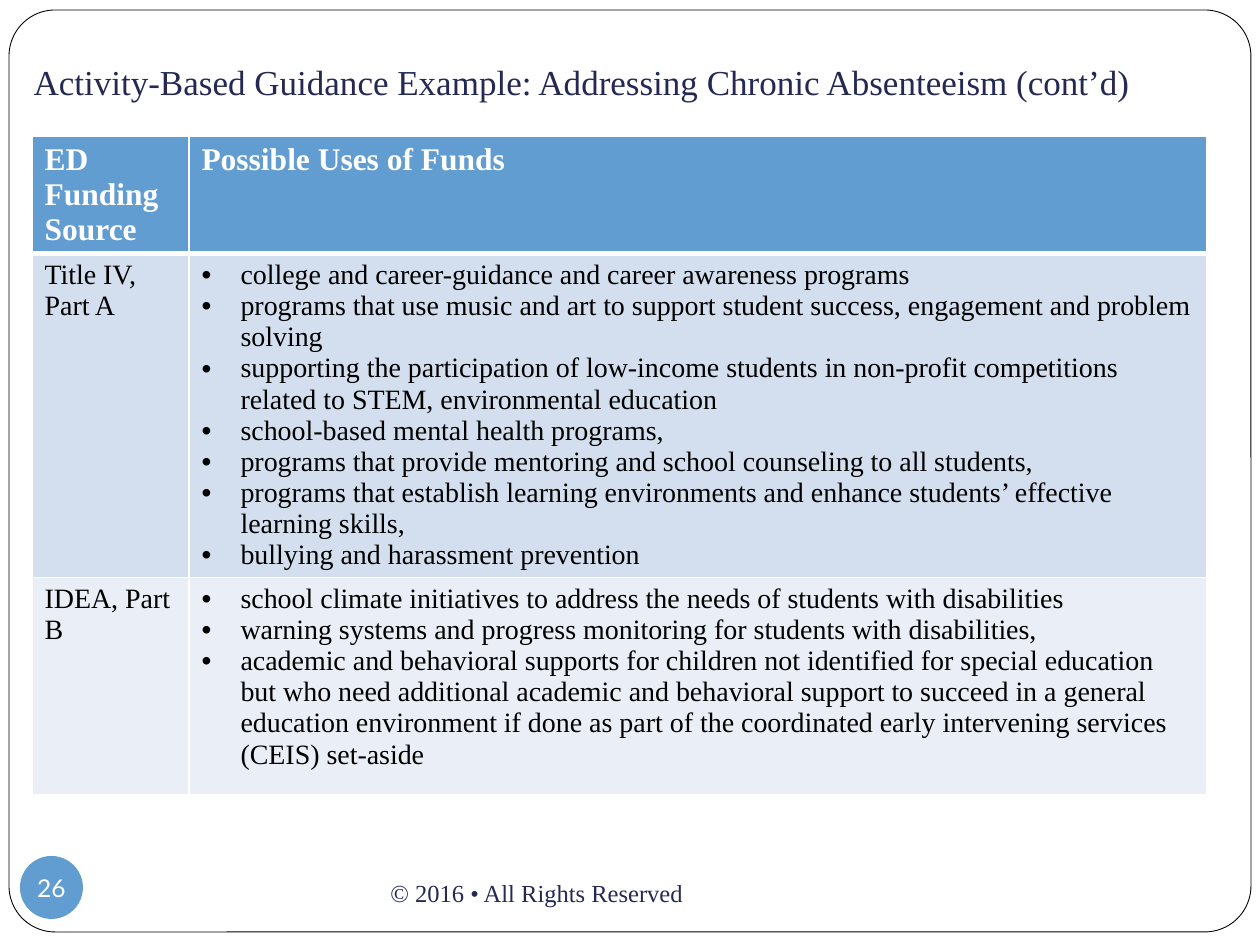
from pptx import Presentation
from pptx.dml.color import RGBColor
from pptx.enum.shapes import MSO_SHAPE
from pptx.enum.text import MSO_ANCHOR, PP_ALIGN
from pptx.oxml.ns import qn
from pptx.util import Pt
from lxml.etree import SubElement

PX = 914400 / 126
SERIF = "Times New Roman"
WHITE, BLACK, NAVY, BLUE = "FFFFFF", "000000", "242852", "629DD1"
HEAD = ("ED Funding Source", "Possible Uses of Funds")
ROWS = [
    ("Title IV, Part A", [
        "college and career-guidance and career awareness programs",
        "programs that use music and art to support student success, engagement and problem solving",
        "supporting the participation of low-income students in non-profit competitions "
        "related to STEM, environmental education",
        "school-based mental health programs,",
        "programs that provide mentoring and school counseling to all students,",
        "programs that establish learning environments and enhance students’ effective learning skills,",
        "bullying and harassment prevention",
    ]),
    ("IDEA, Part B", [
        "school climate initiatives to address the needs of students with disabilities",
        "warning systems and progress monitoring for students with disabilities,",
        "academic and behavioral supports for children not identified for special education "
        "but who need additional academic and behavioral support to succeed in a general "
        "education environment if done as part of the coordinated early intervening services "
        "(CEIS) set-aside",
    ]),
]


def px(n):
    return round(n * PX)


def color(text):
    return RGBColor.from_string(text)


def paint(shape, fill, line=None):
    shape.shadow.inherit = False
    shape.fill.solid()
    shape.fill.fore_color.rgb = color(fill)
    if line:
        shape.line.color.rgb = color(line)
        shape.line.width = Pt(0.5)
    else:
        shape.line.fill.background()


def setup(frame, **values):
    for name, value in values.items():
        setattr(frame, name, value)


def write(para, text, size, tint, face=SERIF, bold=False):
    run = para.add_run()
    run.text = text
    setup(run.font, name=face, size=Pt(size), bold=bold)
    run.font.color.rgb = color(tint)


def bullet(para):
    props = para._p.get_or_add_pPr()
    props.set("marL", str(px(39)))
    props.set("indent", str(px(-39)))
    SubElement(props, qn("a:buFont"), typeface="Arial")
    SubElement(props, qn("a:buChar"), char="•")


def border(cell, base):
    props = cell._tc.get_or_add_tcPr()
    for side in "LRTB":
        width = base if side == "B" else 1
        line = SubElement(props, qn("a:ln" + side), w=str(Pt(width)))
        fill = SubElement(line, qn("a:solidFill"))
        SubElement(fill, qn("a:srgbClr"), val=WHITE)


def add_frame(slide, box):
    shape = slide.shapes.add_shape(MSO_SHAPE.ROUNDED_RECTANGLE, *map(px, box))
    shape.adjustments[0] = 0.05
    paint(shape, WHITE, BLACK)
    # Behind the title
    slide.shapes._spTree.insert(2, shape._element)


def add_title(slide, box, text):
    title = slide.shapes.title
    setup(title, **dict(zip(("left", "top", "width", "height"), map(px, box))))
    setup(title.text_frame, vertical_anchor=MSO_ANCHOR.BOTTOM, word_wrap=True,
          margin_bottom=px(13))
    para = title.text_frame.paragraphs[0]
    para.alignment = PP_ALIGN.LEFT
    write(para, text, 20, NAVY)


def add_grid(slide, box, cols, rows):
    grid = slide.shapes.add_table(len(rows), len(cols), *map(px, box)).table
    for col, width in zip(grid.columns, cols):
        col.width = px(width)
    for row, height in zip(grid.rows, rows):
        row.height = px(height)
    fills = (BLUE, "D3DFEE", "EAEFF7")
    for r, (texts, fill) in enumerate(zip([HEAD] + ROWS, fills)):
        for c, text in enumerate(texts):
            cell = grid.cell(r, c)
            border(cell, 1 if r else 3)
            cell.fill.solid()
            cell.fill.fore_color.rgb = color(fill)
            items = [text] if isinstance(text, str) else text
            for i, item in enumerate(items):
                frame = cell.text_frame
                para = frame.add_paragraph() if i else frame.paragraphs[0]
                if r and c:
                    bullet(para)
                write(para, item, 16 if r else 18, BLACK if r else WHITE, bold=not r)


def add_foot(slide, box, number, text):
    left, top, width, height = box
    # Page number
    dot = slide.shapes.add_shape(MSO_SHAPE.OVAL, px(left), px(top), px(63), px(63))
    paint(dot, BLUE)
    setup(dot.text_frame, vertical_anchor=MSO_ANCHOR.MIDDLE, word_wrap=False,
          margin_left=0, margin_right=0, margin_top=0, margin_bottom=0)
    para = dot.text_frame.paragraphs[0]
    para.alignment = PP_ALIGN.CENTER
    write(para, number, 14, WHITE, "Lato")
    # Rights line
    note = slide.shapes.add_textbox(px(left + 358), px(top + 5), px(width - 358), px(height - 5))
    setup(note.text_frame, vertical_anchor=MSO_ANCHOR.MIDDLE, word_wrap=True)
    write(note.text_frame.paragraphs[0], text, 14, NAVY)


def main():
    deck = Presentation()
    deck.slide_width, deck.slide_height = px(1260), px(945)
    slide = deck.slides.add_slide(deck.slide_layouts[5])
    add_frame(slide, (9, 10, 1242, 922))
    add_title(slide, (21, 38, 1229, 78),
              "Activity-Based Guidance Example: Addressing Chronic Absenteeism (cont’d)")
    add_grid(slide, (32, 136, 1175, 659), (157, 1018), (117, 324, 218))
    add_foot(slide, (20, 856, 904, 68), "26", "© 2016 • All Rights Reserved")
    deck.save("out.pptx")


if __name__ == "__main__":
    main()
